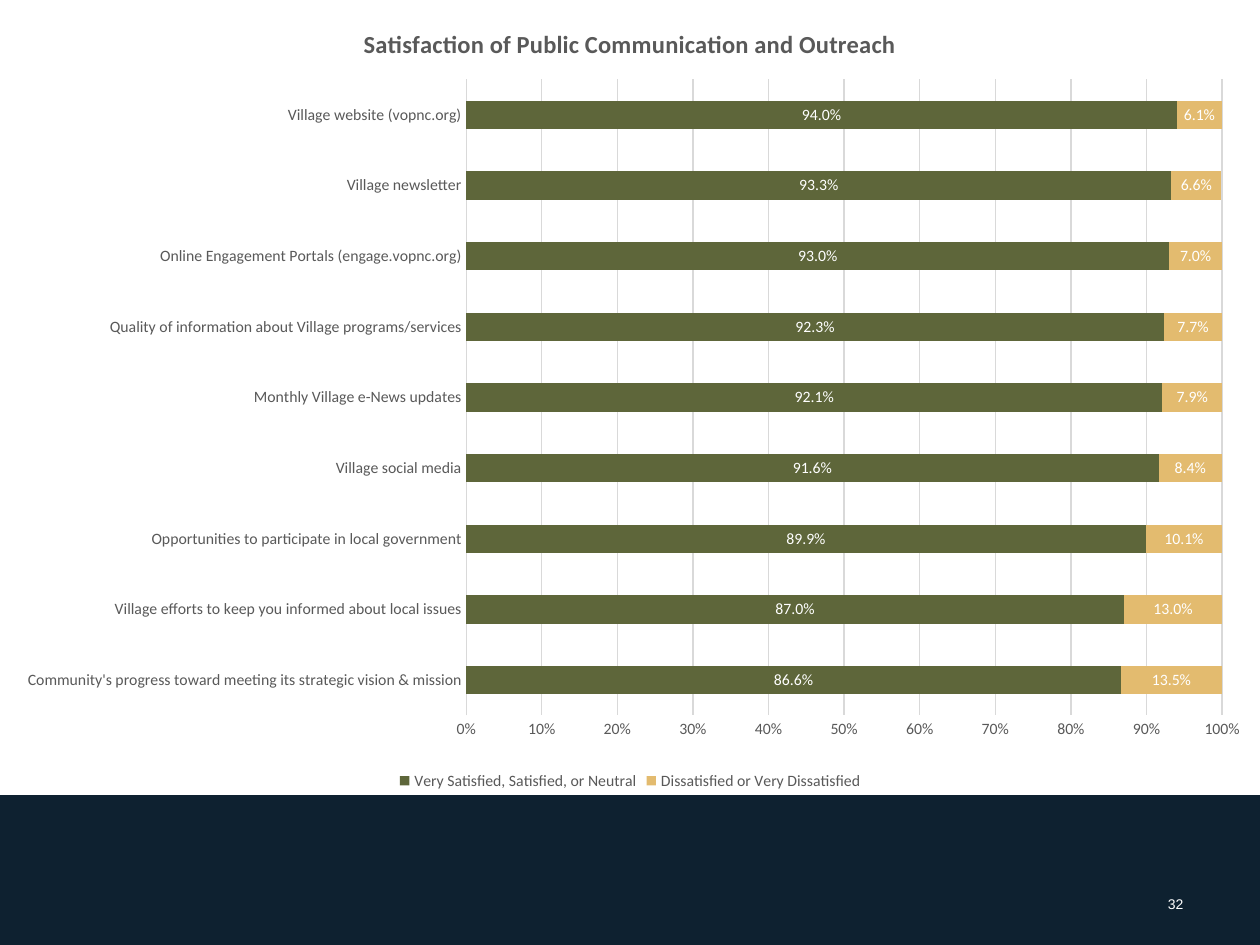
from lxml import etree
from pptx import Presentation
from pptx.chart.data import CategoryChartData
from pptx.dml.color import RGBColor
from pptx.enum import chart as charts, shapes, text
from pptx.oxml.ns import qn
from pptx.util import Inches, Pt

NAVY = RGBColor(0x0E, 0x21, 0x30)
OLIVE = RGBColor(0x5E, 0x66, 0x3A)
GOLD = RGBColor(0xE3, 0xBB, 0x6F)
GREY = RGBColor(0x59, 0x59, 0x59)
PALE = RGBColor(0xD9, 0xD9, 0xD9)
WHITE = RGBColor(0xFF, 0xFF, 0xFF)

RATINGS = [
    ("Community's progress toward meeting its strategic vision & mission", 0.866, 0.135),
    ("Village efforts to keep you informed about local issues", 0.87, 0.13),
    ("Opportunities to participate in local government", 0.899, 0.101),
    ("Village social media", 0.916, 0.084),
    ("Monthly Village e-News updates", 0.921, 0.079),
    ("Quality of information about Village programs/services", 0.923, 0.077),
    ("Online Engagement Portals (engage.vopnc.org)", 0.93, 0.07),
    ("Village newsletter", 0.933, 0.066),
    ("Village website (vopnc.org)", 0.94, 0.061),
]


def style_font(font, size, color, name="Calibri", bold=False):
    """Set the face, size, colour and weight of a font."""
    font.name, font.size, font.bold = name, Pt(size), bold
    font.color.rgb = color


def place_plot(chart, left, top, width, height):
    """Fix the inner plot area at fractions of the chart."""
    area = chart._chartSpace.find(".//" + qn("c:plotArea"))
    layout = area.find(qn("c:layout"))
    if layout is None:
        layout = etree.Element(qn("c:layout"))
        area.insert(0, layout)
    manual = etree.SubElement(layout, qn("c:manualLayout"))
    settings = [("layoutTarget", "inner"), ("xMode", "edge"), ("yMode", "edge"),
                ("x", left), ("y", top), ("w", width), ("h", height)]
    for tag, value in settings:
        etree.SubElement(manual, qn("c:" + tag)).set("val", str(value))


def style_axes(chart):
    """Format the category and percentage axes."""
    for axis in (chart.category_axis, chart.value_axis):
        axis.major_tick_mark = axis.minor_tick_mark = charts.XL_TICK_MARK.NONE
        style_font(axis.tick_labels.font, 9, GREY)
    category_line = chart.category_axis.format.line
    category_line.color.rgb, category_line.width = PALE, Pt(0.75)
    scale = chart.value_axis
    scale.minimum_scale, scale.maximum_scale, scale.major_unit = 0, 1, 0.1
    scale.tick_labels.number_format = "0%"
    scale.tick_labels.number_format_is_linked = False
    scale.format.line.fill.background()
    grid_line = scale.major_gridlines.format.line
    grid_line.color.rgb, grid_line.width = PALE, Pt(0.75)


def add_satisfaction_chart(page, left, top, width, height):
    """Add the stacked bar chart of satisfaction shares."""
    topics, satisfied, dissatisfied = zip(*RATINGS)
    data = CategoryChartData(number_format="0.0%")
    data.categories = topics
    data.add_series("Very Satisfied, Satisfied, or Neutral", satisfied)
    data.add_series("Dissatisfied or Very Dissatisfied", dissatisfied)
    chart = page.shapes.add_chart(
        charts.XL_CHART_TYPE.BAR_STACKED, left, top, width, height, data).chart
    chart.font.name, chart.font.size = "Calibri", Pt(10)

    chart.has_title = True
    span = chart.chart_title.text_frame.paragraphs[0].add_run()
    span.text = "Satisfaction of Public Communication and Outreach"
    style_font(span.font, 14, GREY, bold=True)
    chart.chart_title.include_in_layout = False

    chart.has_legend = True
    chart.legend.position = charts.XL_LEGEND_POSITION.BOTTOM
    chart.legend.include_in_layout = False
    style_font(chart.legend.font, 9, GREY)

    plot = chart.plots[0]
    plot.gap_width, plot.overlap, plot.vary_by_categories = 150, 100, False
    for series, color in zip(plot.series, (OLIVE, GOLD)):
        series.format.fill.solid()
        series.format.fill.fore_color.rgb = color
        labels = series.data_labels
        labels.show_value = True
        labels.position = charts.XL_LABEL_POSITION.CENTER
        labels.number_format, labels.number_format_is_linked = "0.0%", False
        style_font(labels.font, 9, WHITE)
    style_axes(chart)
    place_plot(chart, 0.37, 0.1, 0.6, 0.8)


def add_footer(page, left, top, width, height):
    """Add the dark band with the page number at its right end."""
    band = page.shapes.add_shape(shapes.MSO_SHAPE.RECTANGLE, left, top, width, height)
    band.shadow.inherit = False
    band.fill.solid()
    band.fill.fore_color.rgb = NAVY
    band.line.fill.background()

    number_width = Inches(0.83)
    box = page.shapes.add_textbox(
        left + width - number_width, top + Inches(0.75), number_width, Inches(0.4))
    box.text_frame.word_wrap = True
    para = box.text_frame.paragraphs[0]
    para.alignment = text.PP_ALIGN.LEFT
    span = para.add_run()
    span.text = "32"
    style_font(span.font, 8, WHITE, "Arial")


def main():
    """Build and save the slide."""
    deck = Presentation()
    deck.slide_width, deck.slide_height = Inches(10), Inches(7.5)
    page = deck.slides.add_slide(deck.slide_layouts[6])
    chart_height = Inches(6.31)
    add_footer(page, 0, chart_height, deck.slide_width, deck.slide_height - chart_height)
    add_satisfaction_chart(page, 0, 0, deck.slide_width, chart_height)
    deck.save("out.pptx")


if __name__ == "__main__":
    main()
